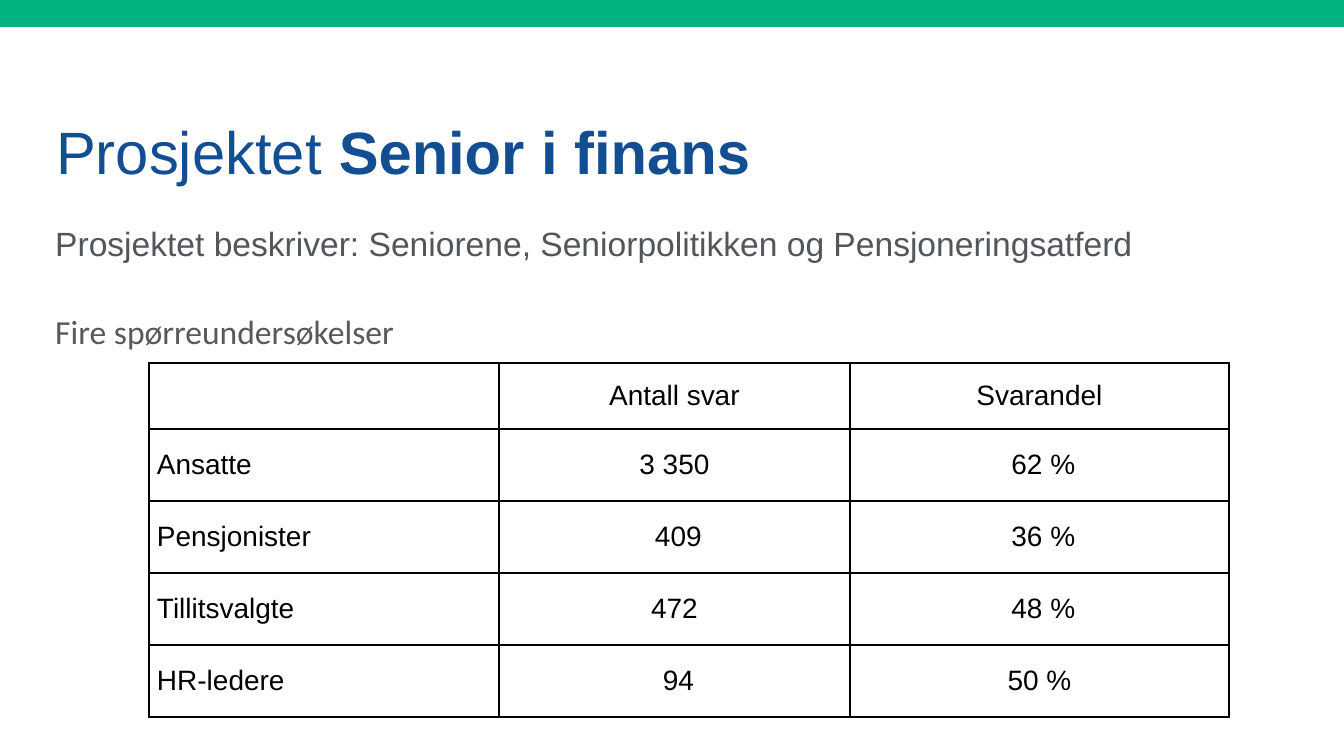
from lxml.etree import SubElement
from pptx import Presentation
from pptx.dml.color import RGBColor
from pptx.enum.shapes import MSO_SHAPE
from pptx.enum.text import MSO_ANCHOR, PP_ALIGN
from pptx.oxml.ns import qn
from pptx.util import Pt

PX = 914400 / 134.4

TEXTS = [
    {"at": (42, 214, 1242, 58), "anchor": MSO_ANCHOR.MIDDLE, "bottom": 7,
     "font": ("Arial", 18, "52565A"),
     "runs": [("Prosjektet beskriver: Seniorene, Seniorpolitikken og Pensjoneringsatferd", False)]},
    {"at": (43, 47, 1242, 144), "anchor": MSO_ANCHOR.BOTTOM, "bottom": 4,
     "font": ("Arial", 32, "124E91"),
     "runs": [("Prosjektet ", False), ("Senior i finans", True)]},
    {"at": (42, 304, 482, 95), "anchor": MSO_ANCHOR.TOP, "bottom": 7,
     "font": ("Calibri", 18, "595959"),
     "runs": [("Fire spørreundersøkelser", False)]},
]
ROWS = [
    ("", "Antall svar", "Svarandel"),
    ("Ansatte", " 3 350 ", " 62 %"),
    ("Pensjonister", " 409", " 36 %"),
    ("Tillitsvalgte", " 472 ", " 48 %"),
    ("HR-ledere", " 94", "50 %"),
]
TABLE_LEFT, TABLE_TOP = 149, 363
COLUMN_WIDTHS = [350, 351, 379]
ROW_HEIGHTS = [66] + [72] * 4
TABLE_FONT = ("Arial", 15, "000000")


def px(length):
    return round(length * PX)


def color(value):
    return RGBColor.from_string(value)


def add_span(para, text, font, bold=False):
    span = para.add_run()
    span.text = text
    name, size, tint = font
    span.font.name = name
    span.font.size = Pt(size)
    span.font.bold = bold
    span.font.color.rgb = color(tint)


def add_text(page, at, anchor, bottom, font, runs):
    box = page.shapes.add_textbox(*map(px, at))
    frame = box.text_frame
    frame.word_wrap = True
    frame.vertical_anchor = anchor
    frame.margin_bottom = px(bottom)
    for text, bold in runs:
        add_span(frame.paragraphs[0], text, font, bold)


def add_borders(cell, tint, width):
    properties = cell._tc.get_or_add_tcPr()
    for side in ("a:lnL", "a:lnR", "a:lnT", "a:lnB"):
        line = SubElement(properties, qn(side), w=str(Pt(width)))
        fill = SubElement(line, qn("a:solidFill"))
        SubElement(fill, qn("a:srgbClr"), val=tint)


def fill_cell(cell, text, centered):
    add_borders(cell, "000000", 1)
    cell.fill.background()
    cell.vertical_anchor = MSO_ANCHOR.MIDDLE
    cell.margin_left = cell.margin_right = px(8)
    cell.margin_top = cell.margin_bottom = 0
    para = cell.text_frame.paragraphs[0]
    para.alignment = PP_ALIGN.CENTER if centered else PP_ALIGN.LEFT
    para.space_before = para.space_after = Pt(2)
    if text:
        add_span(para, text, TABLE_FONT)


def add_survey_table(page):
    size = sum(COLUMN_WIDTHS), sum(ROW_HEIGHTS)
    frame = page.shapes.add_table(
        len(ROWS), len(COLUMN_WIDTHS), *map(px, (TABLE_LEFT, TABLE_TOP, *size)))
    table = frame.table
    table.first_row = table.horz_banding = False
    for column, width in zip(table.columns, COLUMN_WIDTHS):
        column.width = px(width)
    for r, (height, texts) in enumerate(zip(ROW_HEIGHTS, ROWS)):
        table.rows[r].height = px(height)
        for c, text in enumerate(texts):
            fill_cell(table.cell(r, c), text, c > 0)


def main():
    deck = Presentation()
    deck.slide_width, deck.slide_height = px(1344), px(756)
    page = deck.slides.add_slide(deck.slide_layouts[6])
    band = page.shapes.add_shape(MSO_SHAPE.RECTANGLE, 0, 0, px(1344), px(27))
    band.shadow.inherit = False
    band.fill.solid()
    band.fill.fore_color.rgb = color("00B381")
    band.line.fill.background()
    *headings, caption = TEXTS
    for heading in headings:
        add_text(page, **heading)
    add_survey_table(page)
    add_text(page, **caption)
    deck.save("out.pptx")


if __name__ == "__main__":
    main()
